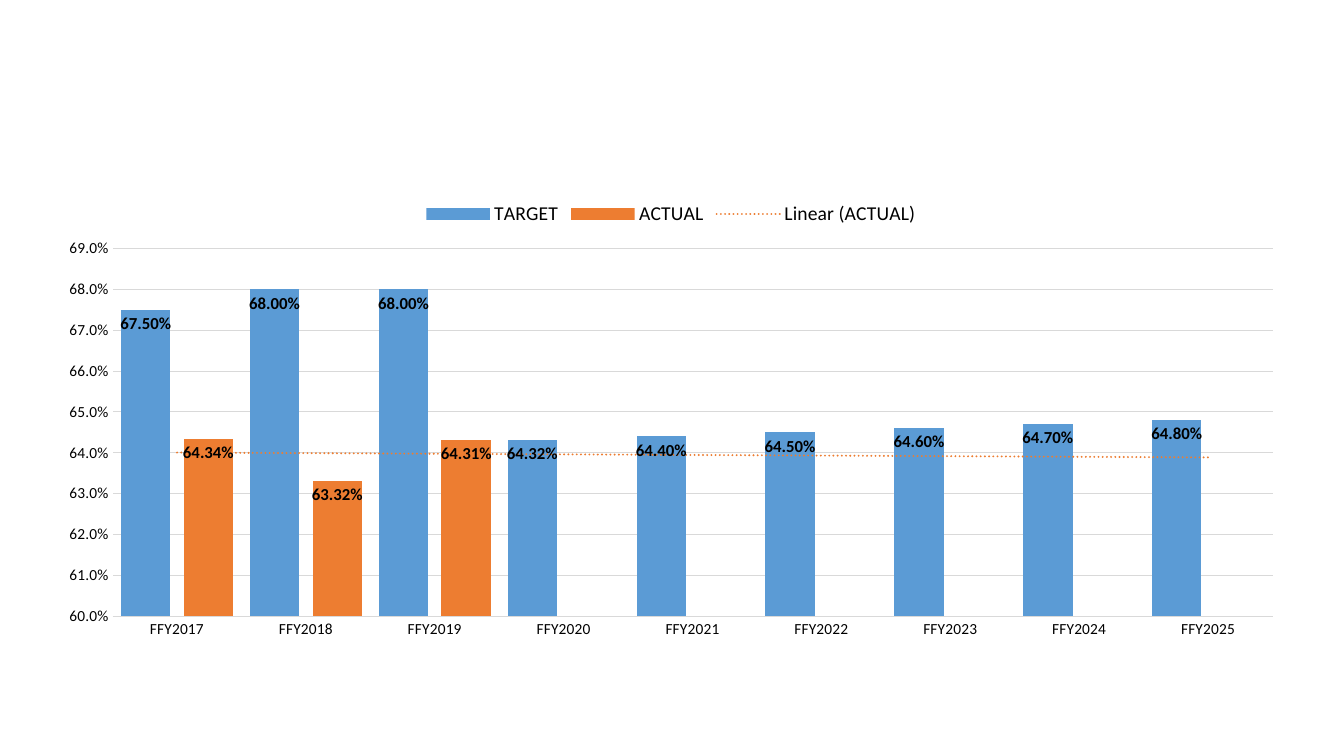
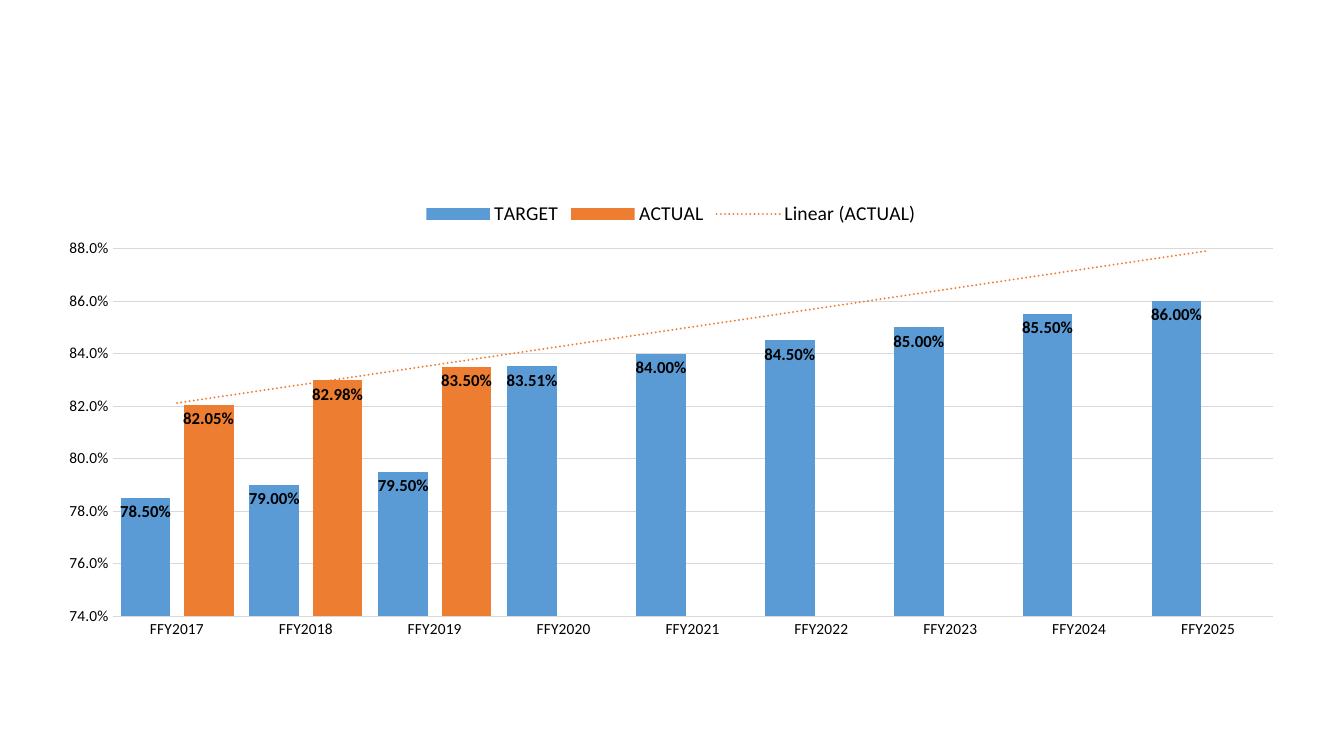
from lxml import etree
from pptx import Presentation
from pptx.chart.data import CategoryChartData
from pptx.dml.color import RGBColor
from pptx.enum.chart import XL_CHART_TYPE, XL_LABEL_POSITION, XL_LEGEND_POSITION, XL_TICK_MARK
from pptx.oxml import parse_xml
from pptx.oxml.ns import nsdecls, qn
from pptx.util import Inches, Pt

COLUMNS = XL_CHART_TYPE.COLUMN_CLUSTERED
INSIDE_END = XL_LABEL_POSITION.INSIDE_END
LEGEND_TOP = XL_LEGEND_POSITION.TOP
NO_TICK = XL_TICK_MARK.NONE

BLACK = RGBColor(0x00, 0x00, 0x00)
GRID = RGBColor(0xD9, 0xD9, 0xD9)
BLUE = RGBColor(0x5B, 0x9B, 0xD5)
ORANGE = RGBColor(0xED, 0x7D, 0x31)

YEARS = [f"FFY{year}" for year in range(2017, 2026)]


def format_font(font, size, bold=False, color=BLACK, name="Calibri"):
    font.name = name
    font.size = Pt(size)
    font.bold = bold
    font.color.rgb = color


def format_line(line, color=GRID, width=0.75):
    line.color.rgb = color
    line.width = Pt(width)


class Deck:
    def __init__(self):
        self.prs = Presentation()
        self.prs.slide_width = Inches(13.33)
        self.prs.slide_height = Inches(7.5)
        self.slide = None

    def add_slide(self):
        self.slide = self.prs.slides.add_slide(self.prs.slide_layouts[6])

    def add_target_chart(self, target, actual, low, high, step, gap):
        data = CategoryChartData(number_format="0.00%")
        data.categories = YEARS
        data.add_series("TARGET", target)
        data.add_series("ACTUAL", actual + [None] * (len(YEARS) - len(actual)))
        chart = self.slide.shapes.add_chart(
            COLUMNS, Inches(0.44), Inches(1.89), Inches(12.43), Inches(4.54), data
        ).chart
        format_font(chart.font, 10)
        chart.has_title = False
        self.style_legend(chart)
        self.style_axes(chart, low, high, step)
        plot = chart.plots[0]
        plot.gap_width = gap
        plot.overlap = -27
        plot.vary_by_categories = False
        for series, color in zip(plot.series, (BLUE, ORANGE)):
            self.style_series(series, color)
        self.add_trend(plot.series[1], ORANGE)

    def style_legend(self, chart):
        chart.has_legend = True
        chart.legend.position = LEGEND_TOP
        chart.legend.include_in_layout = False
        format_font(chart.legend.font, 14)

    def style_axes(self, chart, low, high, step):
        years, values = chart.category_axis, chart.value_axis
        for axis in (years, values):
            axis.major_tick_mark = NO_TICK
            axis.minor_tick_mark = NO_TICK
            format_font(axis.tick_labels.font, 11)
        format_line(years.format.line)
        values.format.line.fill.background()
        values.has_major_gridlines = True
        format_line(values.major_gridlines.format.line)
        values.minimum_scale = low
        values.maximum_scale = high
        values.major_unit = step
        values.tick_labels.number_format = "0.0%"
        values.tick_labels.number_format_is_linked = False

    def style_series(self, series, color):
        series.format.fill.solid()
        series.format.fill.fore_color.rgb = color
        series.invert_if_negative = False
        labels = series.data_labels
        labels.show_value = True
        labels.position = INSIDE_END
        labels.number_format = "0.00%"
        labels.number_format_is_linked = False
        format_font(labels.font, 12, bold=True)

    def add_trend(self, series, color):
        trend = parse_xml(
            f'<c:trendline {nsdecls("c", "a")}><c:spPr>'
            f'<a:ln w="{Pt(1.5)}" cap="rnd"><a:solidFill><a:srgbClr val="{color}"/></a:solidFill>'
            '<a:prstDash val="sysDot"/></a:ln></c:spPr></c:trendline>'
        )
        for tag, value in (("trendlineType", "linear"), ("dispRSqr", "0"), ("dispEq", "0")):
            etree.SubElement(trend, qn(f"c:{tag}")).set("val", value)
        series._element.find(qn("c:cat")).addprevious(trend)


def main():
    deck = Deck()
    deck.add_slide()
    deck.add_target_chart(
        target=[0.675, 0.68, 0.68, 0.6432, 0.644, 0.645, 0.646, 0.647, 0.648],
        actual=[0.6434, 0.6332, 0.6431],
        low=0.6, high=0.69, step=0.01, gap=34,
    )
    deck.add_slide()
    deck.add_target_chart(
        target=[0.785, 0.79, 0.795, 0.8351, 0.84, 0.845, 0.85, 0.855, 0.86],
        actual=[0.8205, 0.8298, 0.835],
        low=0.74, high=0.88, step=0.02, gap=32,
    )
    deck.prs.save("out.pptx")


if __name__ == "__main__":
    main()
